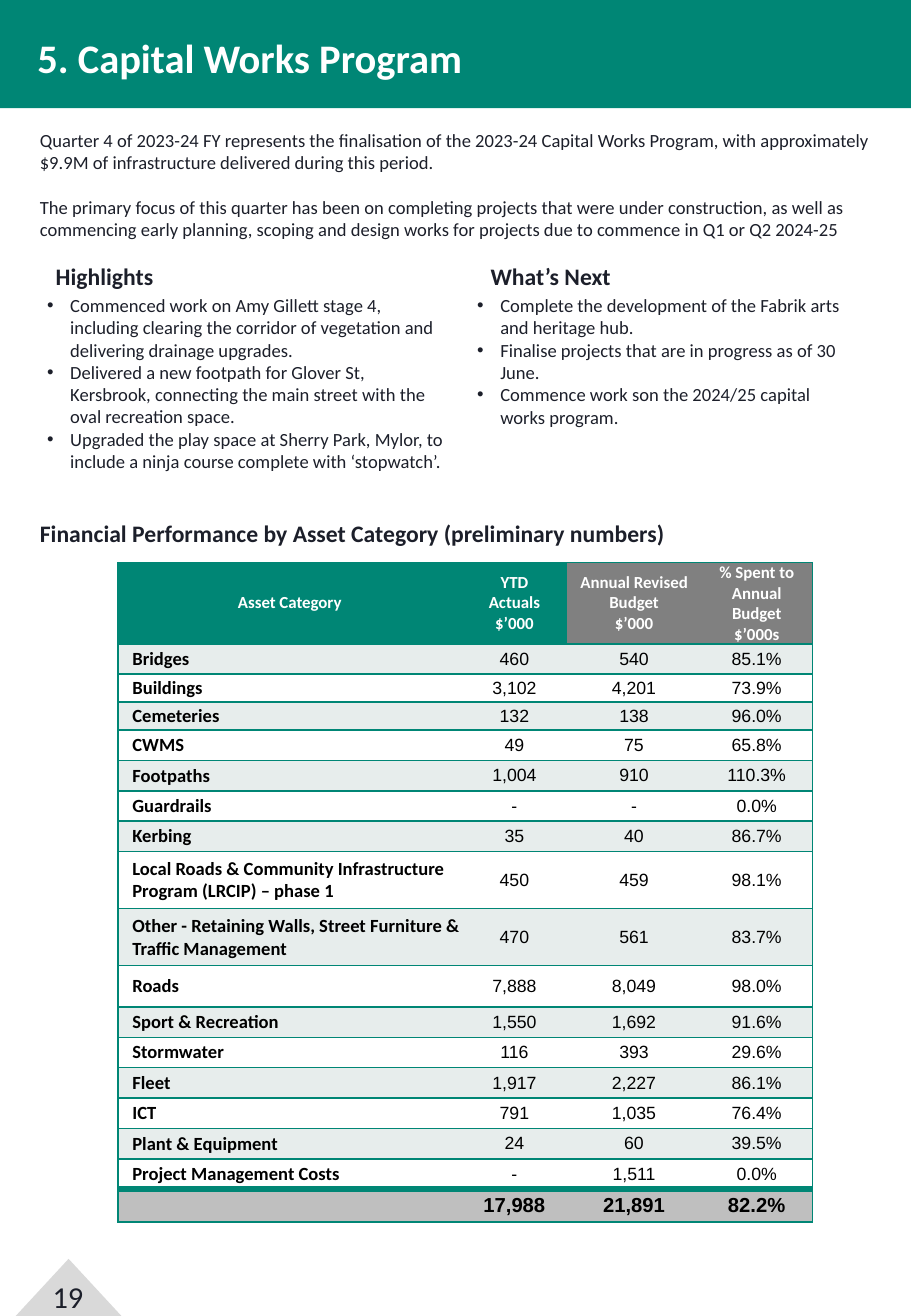
from pptx import Presentation
from pptx.dml.color import RGBColor
from pptx.enum.shapes import MSO_SHAPE as Shape
from pptx.enum.text import MSO_ANCHOR as Anchor, MSO_AUTO_SIZE as Auto, PP_ALIGN as Align
from pptx.oxml.ns import qn
from pptx.util import Inches, Pt
from lxml.etree import SubElement

TEAL, INK, WHITE, BLACK = "008675", "1C1F2A", "FFFFFF", "000000"
GREY, PALE, SILVER = "808080", "E7EDEC", "BFBFBF"
PLAIN = "{2D5ABB26-0587-4C30-8999-92F81FD0307C}"

INTRO = [
    "Quarter 4 of 2023-24 FY represents the finalisation of the 2023-24 Capital Works Program, "
    "with approximately $9.9M of infrastructure delivered during this period.",
    "The primary focus of this quarter has been on completing projects that were under "
    "construction, as well as commencing early planning, scoping and design works for projects "
    "due to commence in Q1 or Q2 2024-25",
]
DONE = [
    "Commenced work on Amy Gillett stage 4, including clearing the corridor of vegetation and "
    "delivering drainage upgrades.",
    "Delivered a new footpath for Glover St, Kersbrook, connecting the main street with the "
    "oval recreation space.",
    "Upgraded the play space at Sherry Park, Mylor, to include a ninja course complete with "
    "‘stopwatch’.",
]
NEXT = [
    "Complete the development of the Fabrik arts and heritage hub.",
    "Finalise projects that are in progress as of 30 June.",
    "Commence work son the 2024/25 capital works program.",
]
HEADS = [
    (["Asset Category"], TEAL),
    (["YTD", "Actuals", "$’000"], TEAL),
    (["Annual Revised Budget", "$’000"], GREY),
    (["% Spent to Annual Budget $’000s"], GREY),
]
ASSETS = [
    ("Bridges", "460", "540", "85.1%"),
    ("Buildings", "3,102", "4,201", "73.9%"),
    ("Cemeteries", "132", "138", "96.0%"),
    ("CWMS", "49", "75", "65.8%"),
    ("Footpaths", "1,004", "910", "110.3%"),
    ("Guardrails", "-", "-", "0.0%"),
    ("Kerbing", "35", "40", "86.7%"),
    ("Local Roads & Community Infrastructure Program (LRCIP) – phase 1", "450", "459", "98.1%"),
    ("Other - Retaining Walls, Street Furniture & Traffic Management", "470", "561", "83.7%"),
    ("Roads", "7,888", "8,049", "98.0%"),
    ("Sport & Recreation", "1,550", "1,692", "91.6%"),
    ("Stormwater", "116", "393", "29.6%"),
    ("Fleet", "1,917", "2,227", "86.1%"),
    ("ICT", "791", "1,035", "76.4%"),
    ("Plant & Equipment", "24", "60", "39.5%"),
    ("Project Management Costs", "-", "1,511", "0.0%"),
]
TOTAL = ("", "17,988", "21,891", "82.2%")
COLS = [2.83, 0.87, 1.1, 0.92]
ROWS = [0.63, 0.25, 0.23, 0.23] + [0.25] * 4 + [0.47, 0.47, 0.34] + [0.25] * 6 + [0.27]


def color(code):
    return RGBColor.from_string(code)


def block(slide, kind, box, fill):
    shape = slide.shapes.add_shape(kind, *map(Inches, box))
    shape.shadow.inherit = False
    shape.fill.solid()
    shape.fill.fore_color.rgb = color(fill)
    shape.line.fill.background()


def write(frame, lines, size, ink=INK, bold=False, font="Calibri", align=Align.LEFT):
    for i, line in enumerate(lines):
        para = frame.add_paragraph() if i else frame.paragraphs[0]
        para.alignment = align
        if not line:
            SubElement(para._p, qn("a:endParaRPr"), sz=str(size * 100))
            continue
        run = para.add_run()
        run.text = line
        run.font.name = font
        run.font.size = Pt(size)
        run.font.bold = bold
        run.font.color.rgb = color(ink)


def text(slide, box, lines, size, wrap=False, **style):
    frame = slide.shapes.add_textbox(*map(Inches, box)).text_frame
    frame.word_wrap = wrap
    frame.auto_size = Auto.SHAPE_TO_FIT_TEXT
    write(frame, lines, size, **style)
    return frame


def bullets(slide, box, lines):
    for para in text(slide, box, lines, 11, wrap=True).paragraphs:
        props = para._p.get_or_add_pPr()
        props.set("marL", str(Inches(0.19)))
        props.set("indent", str(-Inches(0.19)))
        SubElement(props, qn("a:buFont"), typeface="Arial")
        SubElement(props, qn("a:buChar"), char="•")


def border(cell, side, width):
    line = SubElement(cell._tc.get_or_add_tcPr(), qn("a:ln" + side), w=str(Pt(width)))
    fill = SubElement(line, qn("a:solidFill"))
    SubElement(fill, qn("a:srgbClr"), val=TEAL)


def fill_cell(cell, lines, fill, sides, pads, size, **style):
    for side, width in sides:
        border(cell, side, width)
    cell.fill.solid()
    cell.fill.fore_color.rgb = color(fill)
    cell.vertical_anchor = Anchor.MIDDLE
    cell.margin_left, cell.margin_right = map(Inches, pads)
    cell.margin_top = cell.margin_bottom = 0
    write(cell.text_frame, lines, size, **style)


def edges(col, top, low):
    sides = {0: [("L", 1)], len(COLS) - 1: [("R", 1)]}.get(col, [])
    return sides + [("T", top), ("B", low)]


def budget(slide):
    box = map(Inches, (0.97, 4.63, sum(COLS), sum(ROWS)))
    table = slide.shapes.add_table(len(ROWS), len(COLS), *box).table
    table._tbl.tblPr.find(qn("a:tableStyleId")).text = PLAIN
    table.first_row = table.horz_banding = False
    for col, width in zip(table.columns, COLS):
        col.width = Inches(width)
    for row, height in zip(table.rows, ROWS):
        row.height = Inches(height)
    for c, (lines, fill) in enumerate(HEADS):
        fill_cell(table.cell(0, c), lines, fill, edges(c, 1, 1), (0.07, 0.07), 10,
                  ink=WHITE, bold=True, align=Align.CENTER)
    for r, asset in enumerate(ASSETS, 1):
        fill = PALE if r % 2 else WHITE
        low = 4 if r == len(ASSETS) else 1
        fill_cell(table.cell(r, 0), asset[:1], fill, edges(0, 1, low), (0.12, 0), 11,
                  ink=BLACK, bold=True)
        for c, value in enumerate(asset[1:], 1):
            fill_cell(table.cell(r, c), [value], fill, edges(c, 1, low), (0, 0), 10.5,
                      ink=BLACK, font="Arial", align=Align.CENTER)
    for c, value in enumerate(TOTAL):
        fill_cell(table.cell(len(ROWS) - 1, c), [value], SILVER, edges(c, 4, 1), (0, 0), 12,
                  ink=BLACK, bold=True, font="Arial", align=Align.CENTER)


def main():
    deck = Presentation()
    deck.slide_width, deck.slide_height = Inches(7.5), Inches(10.83)
    slide = deck.slides.add_slide(deck.slide_layouts[6])
    block(slide, Shape.ISOSCELES_TRIANGLE, (0.13, 10.36, 0.87, 0.47), "D9D9D9")
    block(slide, Shape.RECTANGLE, (0, 0, 7.5, 0.89), TEAL)
    text(slide, (0.31, 10.47, 0.5, 0.4), ["19"], 18, align=Align.CENTER)
    text(slide, (0.21, 0.22, 3.73, 0.5), ["5. Capital Works Program"], 24, ink=WHITE, bold=True)
    intro = text(slide, (0.23, 1.01, 7.14, 1.03), INTRO, 11, wrap=True)
    intro.paragraphs[1].space_before = Pt(13.4)
    for box, title in [
        ((0.36, 2.11, 1.02, 0.34), "Highlights"),
        ((3.94, 2.11, 1.2, 0.34), "What’s Next"),
        ((0.23, 4.22, 5.38, 0.34), "Financial Performance by Asset Category (preliminary numbers)"),
    ]:
        text(slide, box, [title], 14, bold=True)
    bullets(slide, (0.29, 2.37, 3.46, 1.77), DONE)
    bullets(slide, (3.83, 2.37, 3.31, 1.21), NEXT)
    budget(slide)
    deck.save("out.pptx")


if __name__ == "__main__":
    main()
